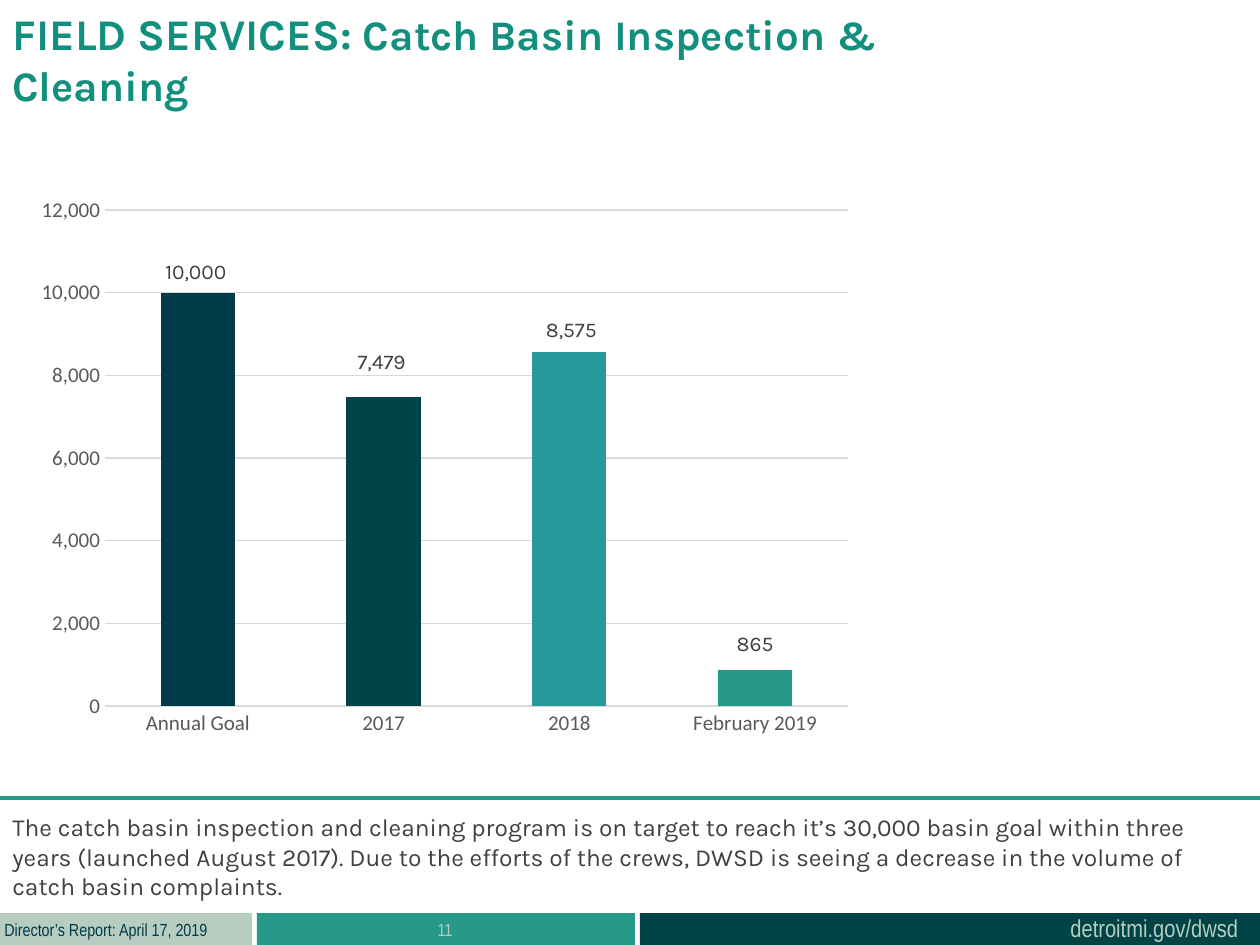
"""Build the catch basin inspection and cleaning slide."""
from lxml import etree
from pptx import Presentation, util as u
from pptx.chart.data import CategoryChartData
from pptx.dml.color import RGBColor
from pptx.enum import chart as c, shapes, text
from pptx.oxml.ns import qn

SCALE = u.Inches(1) / 126
THEME = {
    "teal": "279989", "pine": "004445", "sage": "B7CDC2", "navy": "003B49",
    "aqua": "27999D", "title": "138F7E", "body": "404040", "axis": "595959",
    "grid": "D9D9D9", "white": "FFFFFF",
    "head_size": 25, "subhead_size": 24, "body_size": 14, "label_size": 12, "foot_size": 10,
}


def px(*lengths):
    return [u.Emu(round(length * SCALE)) for length in lengths]


def style(font, name, size, color, bold=False):
    values = {"name": name, "size": u.Pt(THEME[size]), "bold": bold}
    for key, value in values.items():
        setattr(font, key, value)
    font.color.rgb = RGBColor.from_string(THEME[color])


deck = Presentation()
deck.slide_width, deck.slide_height = px(1260, 945)
page = deck.slides.add_slide(deck.slide_layouts[6])
page.background.fill.solid()
page.background.fill.fore_color.rgb = RGBColor.from_string(THEME["white"])

for left, width, color in [(257, 378, "teal"), (640, 630, "pine"), (0, 252, "sage")]:
    band = page.shapes.add_shape(shapes.MSO_SHAPE.RECTANGLE, *px(left, 913, width, 32))
    band.shadow.inherit = False
    band.fill.solid()
    band.fill.fore_color.rgb = RGBColor.from_string(THEME[color])
    band.line.fill.background()

LEFT, CENTER = text.PP_ALIGN.LEFT, text.PP_ALIGN.CENTER
summary = (
    "The catch basin inspection and cleaning program is on target to reach it’s 30,000 basin goal "
    "within three years (launched August 2017). Due to the efforts of the crews, DWSD is seeing "
    "a decrease in the volume of catch basin complaints."
)
texts = [
    ((1058, 907, 195, 43), False, LEFT, "Arial Narrow", "sage", False,
     [("detroitmi.gov/dwsd", "body_size")]),
    ((-8, 913, 234, 34), False, LEFT, "Arial Narrow", "navy", False,
     [("Director’s Report: April 17, 2019", "foot_size")]),
    ((256, 913, 378, 50), True, CENTER, "Arial Narrow", "sage", False, [("11", "foot_size")]),
    ((0, 1, 1009, 97), True, LEFT, "Karla", "title", True,
     [("FIELD SERVICES: ", "head_size"), ("Catch Basin Inspection & Cleaning", "subhead_size")]),
    ((0, 806, 1260, 102), True, LEFT, "Karla", "body", False, [(summary, "body_size")]),
]
for place, wrap, align, face, color, bold, spans in texts:
    box = page.shapes.add_textbox(*px(*place))
    box.text_frame.word_wrap = wrap
    para = box.text_frame.paragraphs[0]
    para.alignment = align
    for words, size in spans:
        span = para.add_run()
        span.text = words
        style(span.font, face, size, color, bold)

rule = page.shapes.add_connector(shapes.MSO_CONNECTOR.STRAIGHT, *px(1260, 798, 0, 798))
rule.line.color.rgb = RGBColor.from_string(THEME["teal"])
rule.line.width = u.Pt(2.25)
etree.SubElement(rule._element.spPr, qn("a:effectLst"))

bars = [
    ("Annual Goal", 10000, "navy", (-2, -227)),
    ("2017", 7479, "pine", (-2, -189)),
    ("2018", 8575, "aqua", (2, -198)),
    ("February 2019", 865, "teal", (0, -44)),
]
data = CategoryChartData(number_format="#,##0")
data.categories = [bar[0] for bar in bars]
data.add_series("Series 1", [bar[1] for bar in bars])
CHART_WIDTH, CHART_HEIGHT = 840, 559
chart = page.shapes.add_chart(
    c.XL_CHART_TYPE.COLUMN_STACKED, *px(25, 186, CHART_WIDTH, CHART_HEIGHT), data
).chart
chart.has_legend = chart.has_title = False
style(chart.font, "Calibri", "label_size", "axis")

for axis in (chart.category_axis, chart.value_axis):
    axis.major_tick_mark = axis.minor_tick_mark = c.XL_TICK_MARK.NONE
    style(axis.tick_labels.font, "Calibri", "label_size", "axis")
scale_values = {"minimum_scale": 0, "maximum_scale": 12000, "major_unit": 2000}
for key, value in scale_values.items():
    setattr(chart.value_axis, key, value)
chart.value_axis.tick_labels.number_format = "#,##0"
chart.value_axis.tick_labels.number_format_is_linked = False
chart.value_axis.format.line.fill.background()
for line in (chart.category_axis.format.line, chart.value_axis.major_gridlines.format.line):
    line.color.rgb = RGBColor.from_string(THEME["grid"])
    line.width = u.Pt(0.75)

plot = chart.plots[0]
for key, value in {"gap_width": 150, "overlap": 100, "vary_by_categories": False}.items():
    setattr(plot, key, value)
series = plot.series[0]
series.format.fill.solid()
series.format.fill.fore_color.rgb = RGBColor.from_string(THEME["teal"])
series.data_labels.show_value = True
labels = series._element.find(qn("c:dLbls"))
leader = labels.find(qn("c:showLeaderLines"))
if leader is None:
    leader = etree.SubElement(labels, qn("c:showLeaderLines"))
leader.set("val", "0")
layouts = []
for index, (name, value, color, (shift_x, shift_y)) in enumerate(bars):
    point = series.points[index]
    point.format.fill.solid()
    point.format.fill.fore_color.rgb = RGBColor.from_string(THEME[color])
    style(point.data_label.font, "Karla", "label_size", "body")
    label = labels.findall(qn("c:dLbl"))[index]
    layout = etree.Element(qn("c:layout"))
    label.insert(1, layout)
    layouts.append((layout, {"x": shift_x / CHART_WIDTH, "y": shift_y / CHART_HEIGHT}))

area = chart._chartSpace.chart.plotArea
for old in area.findall(qn("c:layout")):
    area.remove(old)
layout = etree.Element(qn("c:layout"))
area.insert(0, layout)
layouts.append((layout, {
    "layoutTarget": "inner", "xMode": "edge", "yMode": "edge",
    "x": 80 / CHART_WIDTH, "y": 24 / CHART_HEIGHT,
    "w": 743 / CHART_WIDTH, "h": 496 / CHART_HEIGHT,
}))
for layout, values in layouts:
    manual = etree.SubElement(layout, qn("c:manualLayout"))
    for key, value in values.items():
        etree.SubElement(manual, qn(f"c:{key}")).set("val", str(value))

deck.save("out.pptx")
